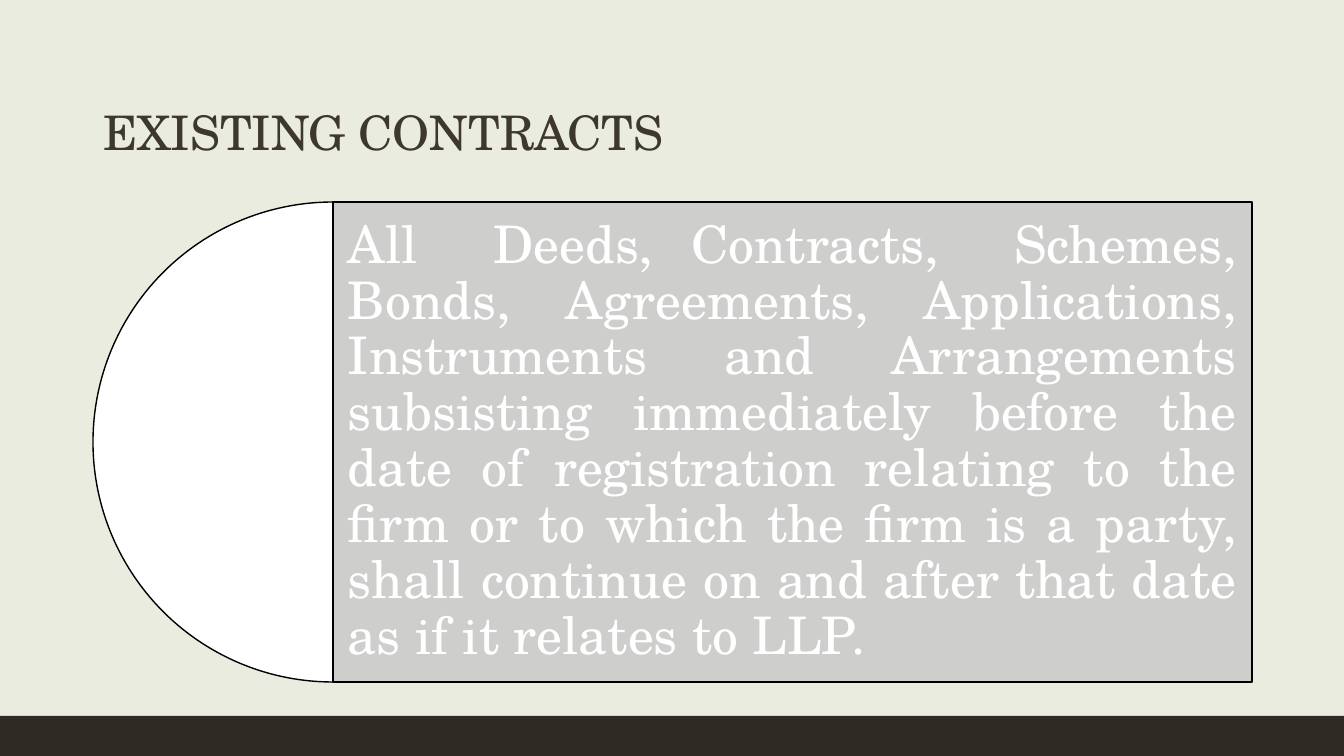
from lxml import etree
from pptx import Presentation
from pptx import util as u
from pptx.dml.color import RGBColor
from pptx.enum import shapes, text
from pptx.oxml import ns

TITLE = "EXISTING CONTRACTS"
BODY = (
    "All  Deeds, Contracts,  Schemes, Bonds, Agreements, Applications, "
    "Instruments and Arrangements subsisting immediately before the date of "
    "registration relating to the firm or to which the firm is a party, shall "
    "continue on and after that date as if it relates to LLP."
)

FONT = "TeX Gyre Schola"
SAGE = RGBColor(0xE9, 0xEC, 0xDF)
BARK = RGBColor(0x2E, 0x29, 0x23)
INK = RGBColor(0x3D, 0x37, 0x2E)
GREY = RGBColor(0xCC, 0xCC, 0xCC)
WHITE = RGBColor(0xFF, 0xFF, 0xFF)
BLACK = RGBColor(0, 0, 0)

PX = u.Inches(1) / 100.8
WIDTH, HEIGHT = 1344, 756
BAR_HEIGHT = 40
LEFT, RIGHT = 93, 1252
TITLE_TOP, TITLE_HEIGHT = 40, 126
PANEL_TOP, DIAMETER = 202, 480
PANEL_LEFT = LEFT + DIAMETER // 2
INSET = 15


def px(n):
    return u.Emu(round(n * PX))


def add_shape(slide, kind, box, fill, line=None):
    sp = slide.shapes.add_shape(kind, *map(px, box))
    sp.shadow.inherit = False
    sp.fill.solid()
    sp.fill.fore_color.rgb = fill
    if line is None:
        sp.line.fill.background()
    else:
        sp.line.color.rgb = line
        sp.line.width = u.Pt(1)
    return sp


def set_text(sp, words, size, color, align, frame):
    tf = sp.text_frame
    for name, value in frame.items():
        setattr(tf, name, value)
    p = tf.paragraphs[0]
    p.alignment = align
    p.line_spacing = 0.9
    r = p.add_run()
    r.text = words
    for name, value in {"name": FONT, "size": u.Pt(size), "bold": False}.items():
        setattr(r.font, name, value)
    r.font.color.rgb = color


prs = Presentation()
prs.slide_width, prs.slide_height = px(WIDTH), px(HEIGHT)
slide = prs.slides.add_slide(prs.slide_layouts[5])
slide.background.fill.solid()
slide.background.fill.fore_color.rgb = SAGE

add_shape(slide, shapes.MSO_SHAPE.RECTANGLE,
          (0, HEIGHT - BAR_HEIGHT, WIDTH, BAR_HEIGHT), BARK)

title = slide.shapes.title
title_box = (LEFT, TITLE_TOP, RIGHT - LEFT, TITLE_HEIGHT)
for name, value in zip(("left", "top", "width", "height"), title_box):
    setattr(title, name, px(value))
set_text(title, TITLE, 34, INK, text.PP_ALIGN.LEFT, {
    "word_wrap": True,
    "auto_size": text.MSO_AUTO_SIZE.NONE,
    "vertical_anchor": text.MSO_ANCHOR.BOTTOM,
})

half_disc = add_shape(slide, shapes.MSO_SHAPE.PIE,
                      (LEFT, PANEL_TOP, DIAMETER, DIAMETER), WHITE, BLACK)
half_disc.adjustments[0] = 54
half_disc.adjustments[1] = 162

panel = add_shape(slide, shapes.MSO_SHAPE.RECTANGLE,
                  (PANEL_LEFT, PANEL_TOP, RIGHT - PANEL_LEFT, DIAMETER), GREY, BLACK)
panel_color = panel.fill._xPr.find(ns.qn("a:solidFill"))[0]
etree.SubElement(panel_color, ns.qn("a:alpha"), val="90000")
frame = {f"margin_{side}": px(INSET) for side in ("left", "top", "right", "bottom")}
set_text(panel, BODY, 37, WHITE, text.PP_ALIGN.JUSTIFY, {
    **frame,
    "word_wrap": True,
    "vertical_anchor": text.MSO_ANCHOR.MIDDLE,
})

prs.save("out.pptx")
